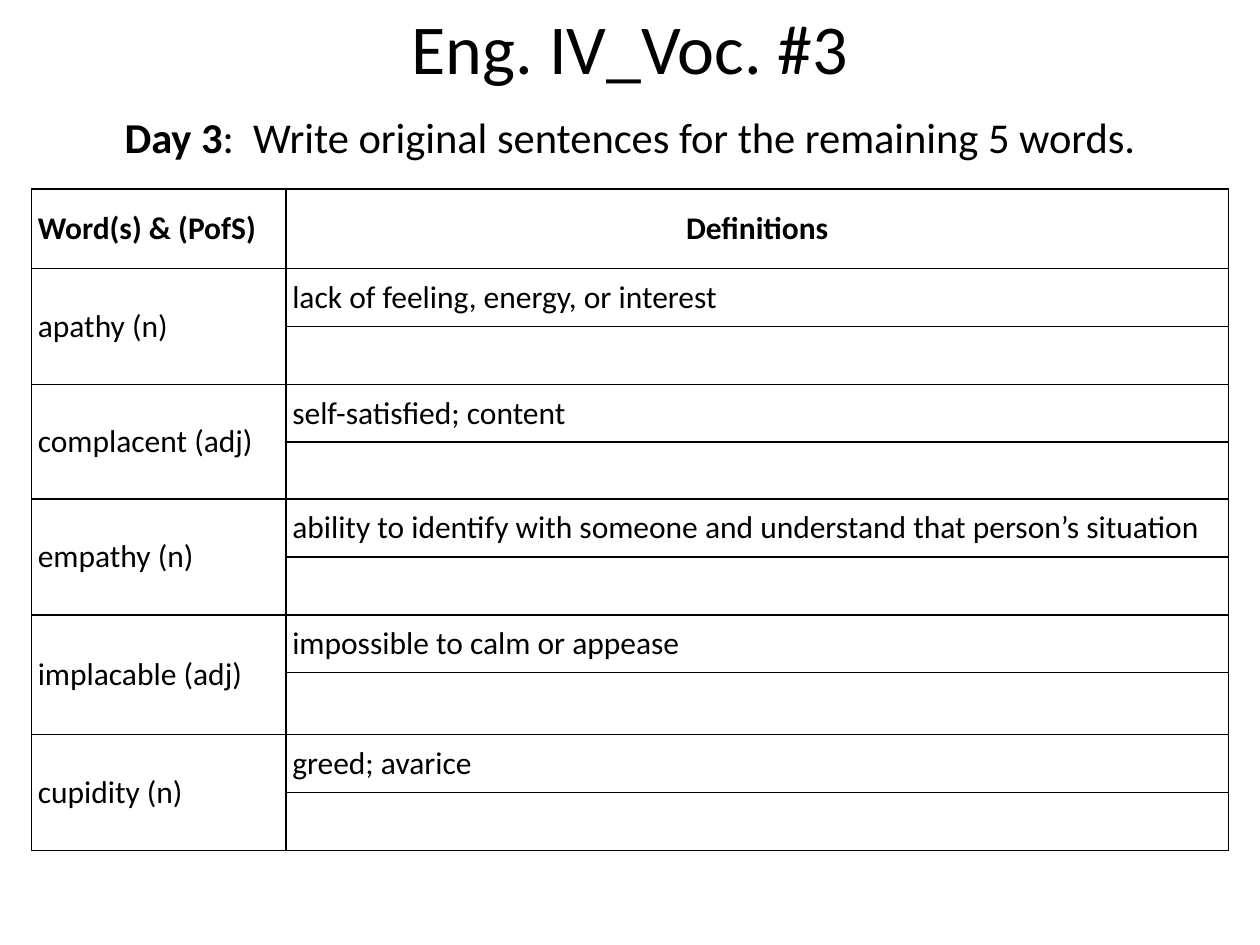
"""Build a vocabulary slide with a table of words and definitions."""
from lxml import etree
from pptx import Presentation
from pptx.dml.color import RGBColor
from pptx.enum.text import MSO_ANCHOR, PP_ALIGN
from pptx.oxml.ns import qn
from pptx.util import Inches, Pt

BLACK = RGBColor(0, 0, 0)
WHITE = RGBColor(255, 255, 255)
MIDDLE = MSO_ANCHOR.MIDDLE
LEFT, CENTER = PP_ALIGN.LEFT, PP_ALIGN.CENTER
FONT = "Calibri"

WORDS = [
    ("apathy (n)", "lack of feeling, energy, or interest"),
    ("complacent (adj)", "self-satisfied; content"),
    ("empathy (n)", "ability to identify with someone and understand that person’s situation"),
    ("implacable (adj)", "impossible to calm or appease"),
    ("cupidity (n)", "greed; avarice"),
]
COLUMN_WIDTHS = [2.02, 7.48]
ROW_HEIGHTS = [0.63, 0.46, 0.46, 0.46, 0.45, 0.46, 0.46, 0.46, 0.49, 0.46, 0.46]


def write_paragraph(text_frame, runs, size, alignment):
    paragraph = text_frame.paragraphs[0]
    paragraph.alignment = alignment
    paragraph.font.name = FONT
    paragraph.font.size = Pt(size)
    paragraph.font.color.rgb = BLACK
    for text, bold in runs:
        run = paragraph.add_run()
        run.text = text
        run.font.bold = bold
    return paragraph


def format_cell(cell):
    cell.vertical_anchor = MIDDLE
    cell.margin_left = cell.margin_right = Inches(0.05)
    cell.margin_top = cell.margin_bottom = 0
    properties = cell._tc.get_or_add_tcPr()
    for side in ("a:lnL", "a:lnR", "a:lnT", "a:lnB"):
        border = etree.SubElement(properties, qn(side), w=str(Pt(1)))
        fill = etree.SubElement(border, qn("a:solidFill"))
        etree.SubElement(fill, qn("a:srgbClr"), val=str(BLACK))
    cell.fill.background()


presentation = Presentation()
presentation.slide_width = Inches(10)
presentation.slide_height = Inches(7.5)
slide = presentation.slides.add_slide(presentation.slide_layouts[6])
slide.background.fill.solid()
slide.background.fill.fore_color.rgb = WHITE

instruction = [("Day 3", True), (":  Write original sentences for the remaining 5 words.", False)]
headings = [
    (0.75, 0.67, 8.5, 0.83, instruction, 24.3, 1.0),
    (0.5, 0, 9, 0.87, [("Eng. IV_Voc. #3", False)], 40, 0.8),
]
for left, top, width, height, runs, size, spacing in headings:
    shape = slide.shapes.add_textbox(Inches(left), Inches(top), Inches(width), Inches(height))
    shape.text_frame.word_wrap = True
    shape.text_frame.vertical_anchor = MIDDLE
    paragraph = write_paragraph(shape.text_frame, runs, size, CENTER)
    paragraph.line_spacing = spacing

table_frame = slide.shapes.add_table(
    len(ROW_HEIGHTS), len(COLUMN_WIDTHS), Inches(0.25), Inches(1.5), Inches(9.5), Inches(5.25)
)
table = table_frame.table
for column, width in zip(table.columns, COLUMN_WIDTHS):
    column.width = Inches(width)
for row, height in zip(table.rows, ROW_HEIGHTS):
    row.height = Inches(height)
    for cell in row.cells:
        format_cell(cell)

write_paragraph(table.cell(0, 0).text_frame, [("Word(s) & (PofS)", True)], 18, LEFT)
write_paragraph(table.cell(0, 1).text_frame, [("Definitions", True)], 18, CENTER)
for index, (word, definition) in enumerate(WORDS):
    first_row = 1 + 2 * index
    table.cell(first_row, 0).merge(table.cell(first_row + 1, 0))
    for column_index, text in enumerate((word, definition)):
        text_frame = table.cell(first_row, column_index).text_frame
        write_paragraph(text_frame, [(text, False)], 18, LEFT)

presentation.save("out.pptx")
